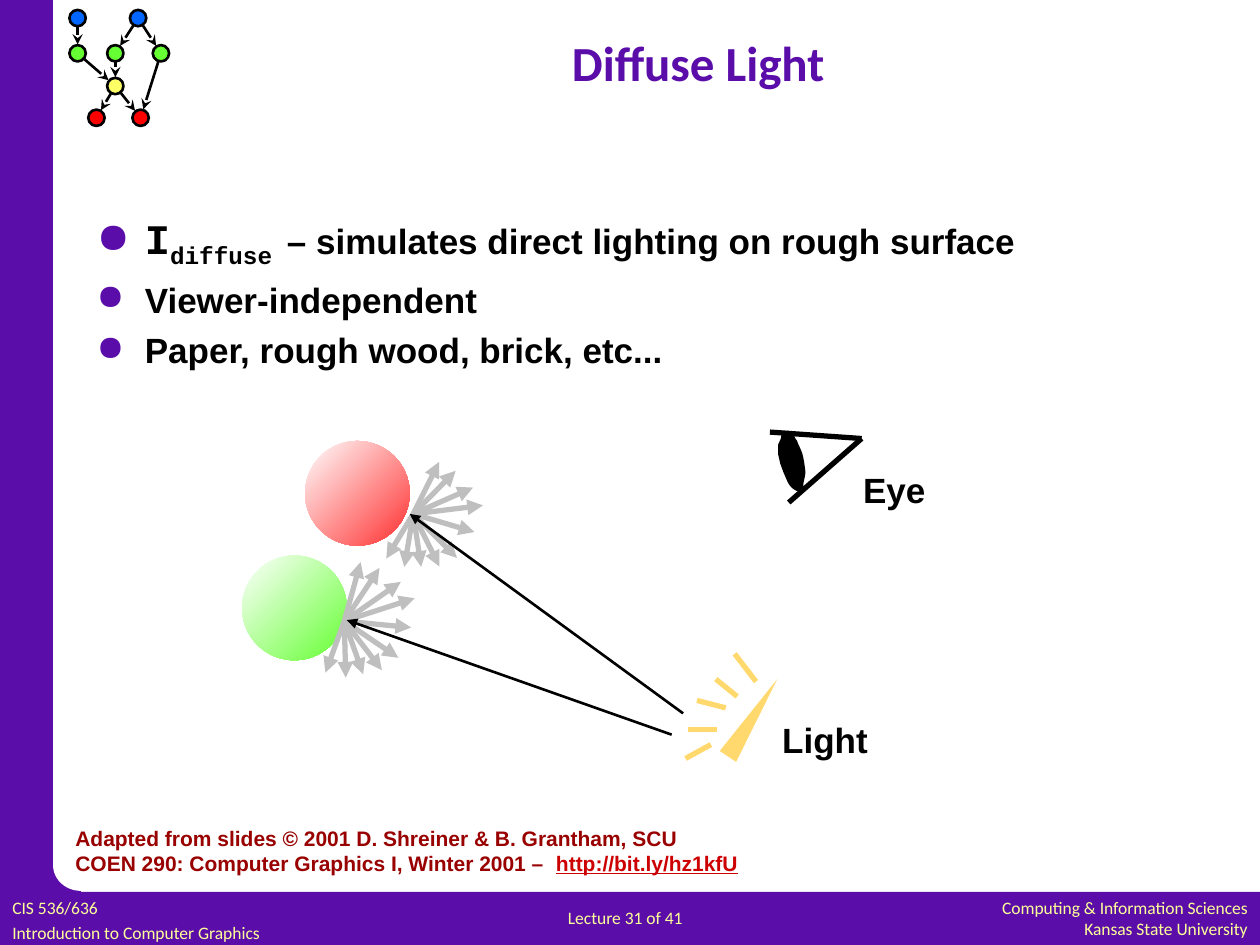
import math
from lxml import etree
from pptx import Presentation
from pptx.dml.color import RGBColor
from pptx.enum import shapes, text
from pptx.oxml import ns
from pptx.util import Cm, Pt

PURPLE = RGBColor(0x5B, 0x0D, 0xAA)
CREAM = RGBColor(0xFF, 0xFF, 0x99)
WHITE = RGBColor(0xFF, 0xFF, 0xFF)
BLACK = RGBColor(0, 0, 0)
GRAY = RGBColor(0xBF, 0xBF, 0xBF)
BLUE = RGBColor(0, 0x66, 0xFF)
GREEN = RGBColor(0x66, 0xFF, 0x33)
YELLOW = RGBColor(0xFF, 0xFF, 0x66)
RED = RGBColor(0xFF, 0, 0)
CORAL = RGBColor(0xFF, 0x31, 0x31)
AMBER = RGBColor(0xFF, 0xD9, 0x6D)
MAROON = RGBColor(0x99, 0, 0)
LINK_RED = RGBColor(0xCC, 0, 0)

RECT = shapes.MSO_SHAPE.RECTANGLE
OVAL = shapes.MSO_SHAPE.OVAL
LEFT, CENTER, RIGHT = text.PP_ALIGN.LEFT, text.PP_ALIGN.CENTER, text.PP_ALIGN.RIGHT


def paint(shape, fill, outline=None, weight=1.5):
    shape.shadow.inherit = False
    shape.fill.solid()
    shape.fill.fore_color.rgb = fill
    if outline is None:
        shape.line.fill.background()
    else:
        shape.line.color.rgb = outline
        shape.line.width = Pt(weight)


def add_block(slide, kind, left, top, width, height, fill, outline=None):
    block = slide.shapes.add_shape(kind, Cm(left), Cm(top), Cm(width), Cm(height))
    paint(block, fill, outline)
    return block


def add_line(slide, start, end, color, weight, head=None):
    line = slide.shapes.add_connector(
        shapes.MSO_CONNECTOR.STRAIGHT, *(Cm(v) for v in (*start, *end)))
    line.line.color.rgb = color
    line.line.width = Pt(weight)
    if head:
        etree.SubElement(line.line._get_or_add_ln(), ns.qn("a:tailEnd"), type=head)
    etree.SubElement(line._element.spPr, ns.qn("a:effectLst"))


def add_outline(slide, points, fill, outline=None, weight=3):
    corners = [(Cm(x), Cm(y)) for x, y in points]
    builder = slide.shapes.build_freeform(*corners[0])
    builder.add_line_segments(corners[1:], close=True)
    paint(builder.convert_to_shape(), fill, outline, weight)


def add_run(paragraph, words, font, size, color, bold=False):
    run = paragraph.add_run()
    run.text = words
    run.font.name = font
    run.font.size = Pt(size)
    run.font.color.rgb = color
    run.font.bold = bold
    return run


def add_frame(slide, left, top, width, height):
    frame = slide.shapes.add_textbox(Cm(left), Cm(top), Cm(width), Cm(height)).text_frame
    frame.word_wrap = True
    return frame


def add_text(slide, box, lines, font, size, color, bold=False, align=LEFT, gap=0):
    frame = add_frame(slide, *box)
    for i, words in enumerate(lines):
        paragraph = frame.add_paragraph() if i else frame.paragraphs[0]
        paragraph.alignment = align
        if i:
            paragraph.space_before = Pt(gap)
        add_run(paragraph, words, font, size, color, bold)
    return frame


def border(slide, width, height, band):
    add_block(slide, RECT, 0, height - band, width, band, PURPLE)
    add_block(slide, RECT, 0, 0, band, height, PURPLE)
    add_block(slide, RECT, 0.51, height - 1.65, 1.12, 1.12, PURPLE)
    add_block(slide, OVAL, band, height - 2.13, 1.12, 1.04, WHITE)


def footer(slide, top):
    style = ("Calibri", 10, CREAM)
    add_text(slide, (0, top, 7.5, 1.1),
             ["CIS 536/636", "Introduction to Computer Graphics"], *style, gap=2)
    add_text(slide, (11.2, top + 0.2, 4, 0.7), ["Lecture 31 of 41"], *style)
    add_text(slide, (17.4, top, 8, 1.1),
             ["Computing & Information Sciences", "Kansas State University"],
             *style, align=RIGHT)


def node_graph(slide, left, top):
    size = 0.33
    nodes = {
        "source_a": (0, 0, BLUE), "source_b": (1.22, 0, BLUE),
        "mid_a": (0, 0.71, GREEN), "mid_b": (0.76, 0.71, GREEN), "mid_c": (1.68, 0.71, GREEN),
        "hub": (0.76, 1.37, YELLOW),
        "sink_a": (0.38, 2.01, RED), "sink_b": (1.27, 2.01, RED),
    }
    edges = [
        ("source_a", "mid_a"), ("source_b", "mid_b"), ("source_b", "mid_c"),
        ("mid_a", "hub"), ("mid_b", "hub"), ("mid_c", "sink_b"),
        ("hub", "sink_b"), ("hub", "sink_a"),
    ]
    for x, y, color in nodes.values():
        add_block(slide, OVAL, left + x, top + y, size, size, color, BLACK)
    for origin, target in edges:
        (x1, y1), (x2, y2) = (
            (left + nodes[n][0] + size / 2, top + nodes[n][1] + size / 2)
            for n in (origin, target))
        trim = 0.18 / math.hypot(x2 - x1, y2 - y1)
        dx, dy = (x2 - x1) * trim, (y2 - y1) * trim
        add_line(slide, (x1 + dx, y1 + dy), (x2 - dx, y2 - dy), BLACK, 1.5, "stealth")


def title(slide, *box):
    frame = add_text(slide, box, ["Diffuse Light"], "Calibri", 28, PURPLE, True, CENTER)
    frame.vertical_anchor = text.MSO_ANCHOR.MIDDLE


def key_points(slide, *box):
    frame = add_frame(slide, *box)
    points = [
        [("I", "Courier New", 24, 0), ("diffuse ", "Courier New", 24, -25000),
         ("– simulates direct lighting on rough surface", "Arial", 20, 0)],
        [("Viewer-independent", "Arial", 20, 0)],
        [("Paper, rough wood, brick, etc...", "Arial", 20, 0)],
    ]
    for i, parts in enumerate(points):
        paragraph = frame.add_paragraph() if i else frame.paragraphs[0]
        if i:
            paragraph.space_before = Pt(5)
        props = paragraph._p.get_or_add_pPr()
        props.set("marL", str(Cm(0.97)))
        props.set("indent", str(-Cm(0.97)))
        tint = etree.SubElement(props, ns.qn("a:buClr"))
        etree.SubElement(tint, ns.qn("a:srgbClr"), val=str(PURPLE))
        etree.SubElement(props, ns.qn("a:buChar"), char="●")
        for words, font, size, baseline in parts:
            run = add_run(paragraph, words, font, size, BLACK, True)
            if baseline:
                run._r.get_or_add_rPr().set("baseline", str(baseline))


def lit_sphere(slide, left, top, color, hit, turn=0, scale=1):
    sphere = add_block(slide, OVAL, left, top, 2.11, 2.11, color)
    sphere.fill.gradient()
    sphere.fill.gradient_angle = 315
    for stop, shade in zip(sphere.fill.gradient_stops, (WHITE, color)):
        stop.color.rgb = shade
    tips = [(0.71, -1.07), (0.33, -1.19), (1.14, -0.79), (1.42, -0.46), (-0.38, 1.04),
            (0.03, 1.14), (0.38, 1.07), (0.76, 0.99), (1.35, 0.13), (1.09, 0.74)]
    cos, sin = (scale * f(math.radians(turn)) for f in (math.cos, math.sin))
    x, y = left + hit[0], top + hit[1]
    for dx, dy in tips:
        tip = (x + dx * cos - dy * sin, y + dx * sin + dy * cos)
        add_line(slide, (x, y), tip, GRAY, 3, "triangle")


def curve_points(start, curves, steps=6):
    points = [start]
    for a, b, end in curves:
        for t in (i / steps for i in range(1, steps + 1)):
            weights = ((1 - t) ** 3, 3 * t * (1 - t) ** 2, 3 * t * t * (1 - t), t ** 3)
            points.append(tuple(sum(w * p[axis] for w, p in zip(weights, (start, a, b, end)))
                                for axis in (0, 1)))
        start = end
    return points


def eye(slide, left, top):
    for x, y in ((0.38, 1.42), (0, 0)):
        add_line(slide, (left + 1.85, top + 0.13), (left + x, top + y), BLACK, 3)
    pupil = curve_points((0.66, 1.17), [
        ((0.53, 1.14), (0.46, 1.09), (0.41, 0.99)),
        ((0.38, 0.91), (0.08, 0.36), (0.28, 0.13)),
        ((0.28, 0.05), (0.3, 0.03), (0.38, 0.03)),
        ((0.48, 0.1), (0.41, 0.05), (0.48, 0.18)),
        ((0.51, 0.2), (0.51, 0.23), (0.51, 0.23)),
        ((0.61, 0.46), (0.61, 0.41), (0.66, 0.76)),
        ((0.69, 0.89), (0.56, 1.07), (0.66, 1.17)),
    ])
    add_outline(slide, [(left + x, top + y) for x, y in pupil], BLACK, BLACK)
    add_text(slide, (left + 1.63, top + 0.61, 2.6, 1.12), ["Eye"], "Arial", 20, BLACK, True)


def light(slide, left, top):
    beams = [(1.42, 0.56, 0.99, 0), (1.04, 0.86, 0.61, 0.51), (0.81, 1.09, 0.23, 0.94),
             (0.51, 1.83, 0, 2.11), (0.64, 1.52, 0.05, 1.52)]
    for x1, y1, x2, y2 in beams:
        add_line(slide, (left + x1, top + y1), (left + x2, top + y2), AMBER, 3)
    cone = [(1.02, 2.18), (1.85, 0.51), (0.69, 1.96)]
    add_outline(slide, [(left + x, top + y) for x, y in cone], AMBER)
    add_text(slide, (left + 1.7, top + 1.17, 2.6, 1.12), ["Light"], "Arial", 20, BLACK, True)
    for start, hit in (((-0.28, 1.63), (-6.83, -0.68)), ((-0.05, 1.2), (-5.56, -2.82))):
        add_line(slide, (left + start[0], top + start[1]), (left + hit[0], top + hit[1]),
                 BLACK, 1.5, "triangle")


def credit(slide, *box):
    frame = add_text(slide, box, ["Adapted from slides © 2001 D. Shreiner & B. Grantham, SCU",
                                  "COEN 290: Computer Graphics I, Winter 2001 –  "],
                     "Arial", 12, MAROON, True)
    address = add_run(frame.paragraphs[1], "http://bit.ly/hz1kfU", "Arial", 12, LINK_RED, True)
    address.font.underline = True


def main():
    deck = Presentation()
    deck.slide_width, deck.slide_height = Cm(25.4), Cm(19.05)
    slide = deck.slides.add_slide(deck.slide_layouts[6])
    border(slide, 25.4, 19.05, 1.07)
    footer(slide, 17.96)
    node_graph(slide, 1.4, 0.2)
    title(slide, 3.18, 0.2, 21.79, 2.11)
    key_points(slide, 1.7, 4.15, 21.59, 4)
    lit_sphere(slide, 4.88, 11.2, GREEN, (2.06, 1.32))
    lit_sphere(slide, 6.15, 8.89, CORAL, (2.18, 1.47), turn=11, scale=0.95)
    eye(slide, 15.52, 8.71)
    light(slide, 13.82, 13.18)
    credit(slide, 1.27, 16.51, 15, 1.27)
    deck.save("out.pptx")


if __name__ == "__main__":
    main()
